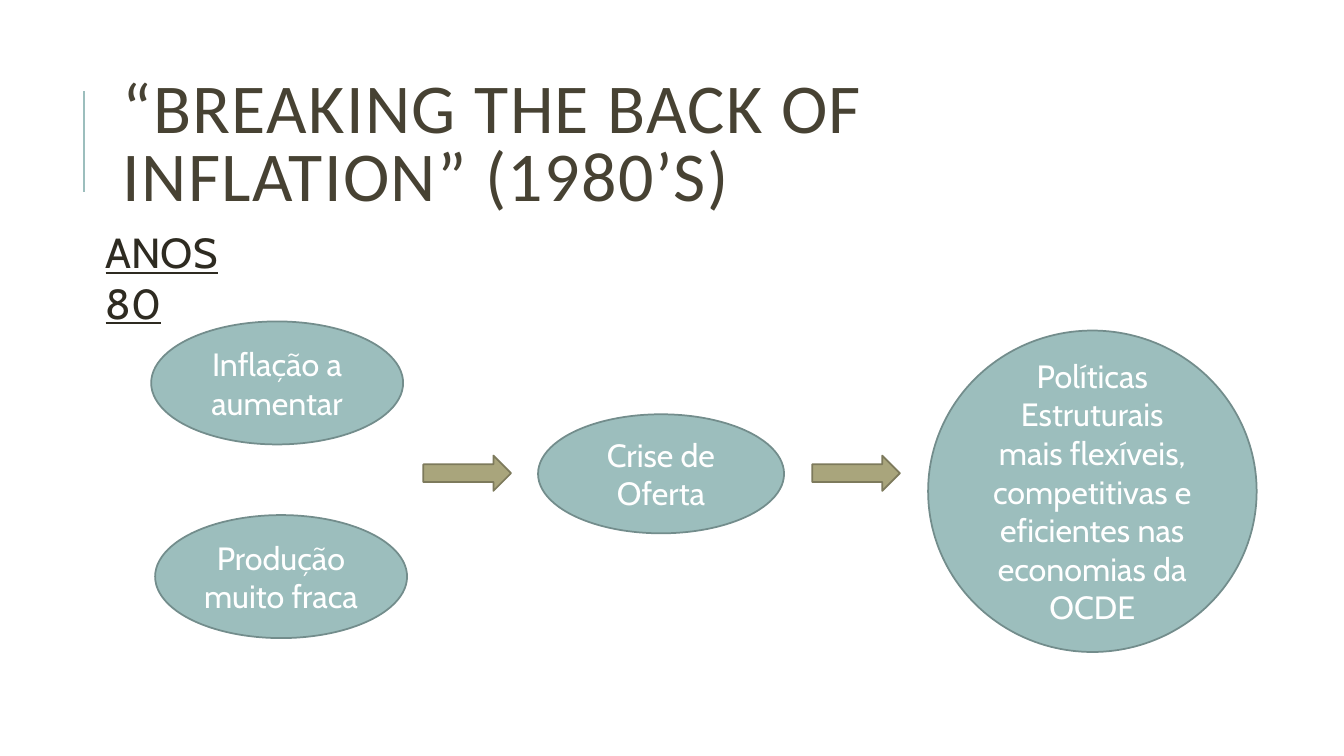
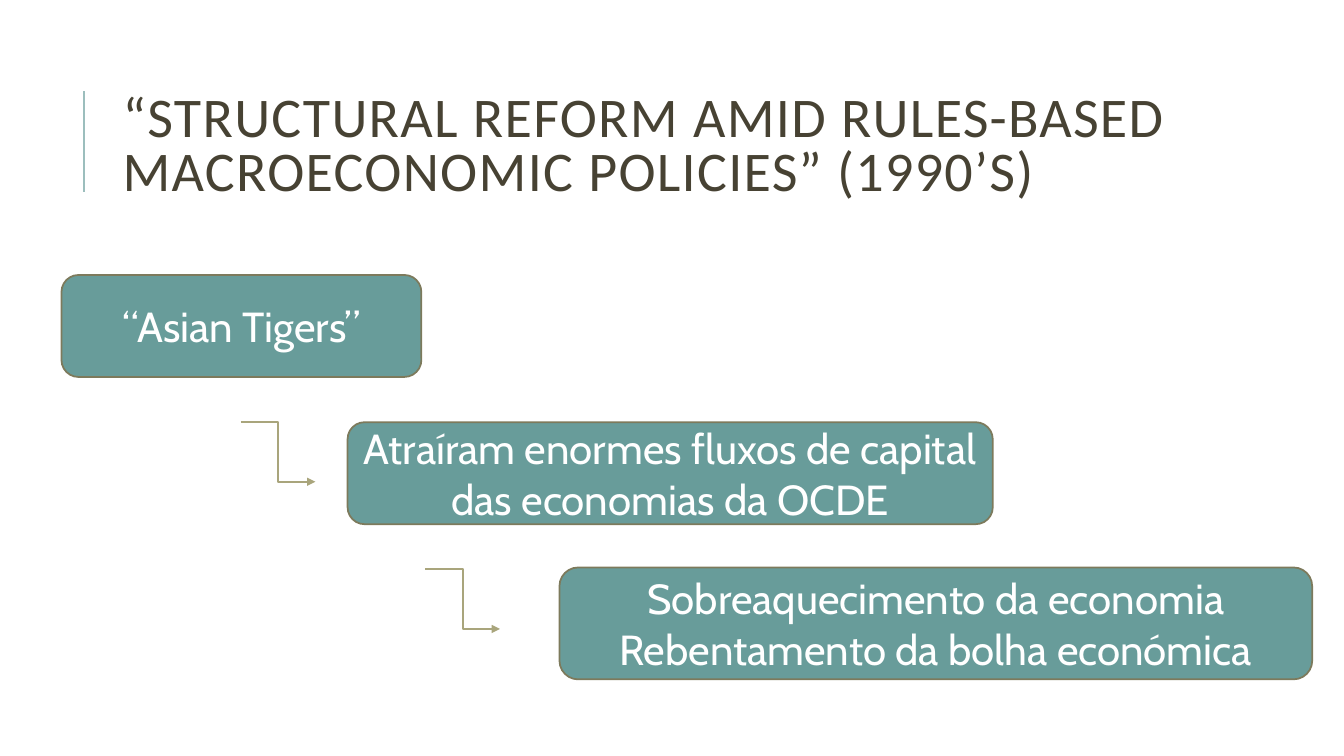
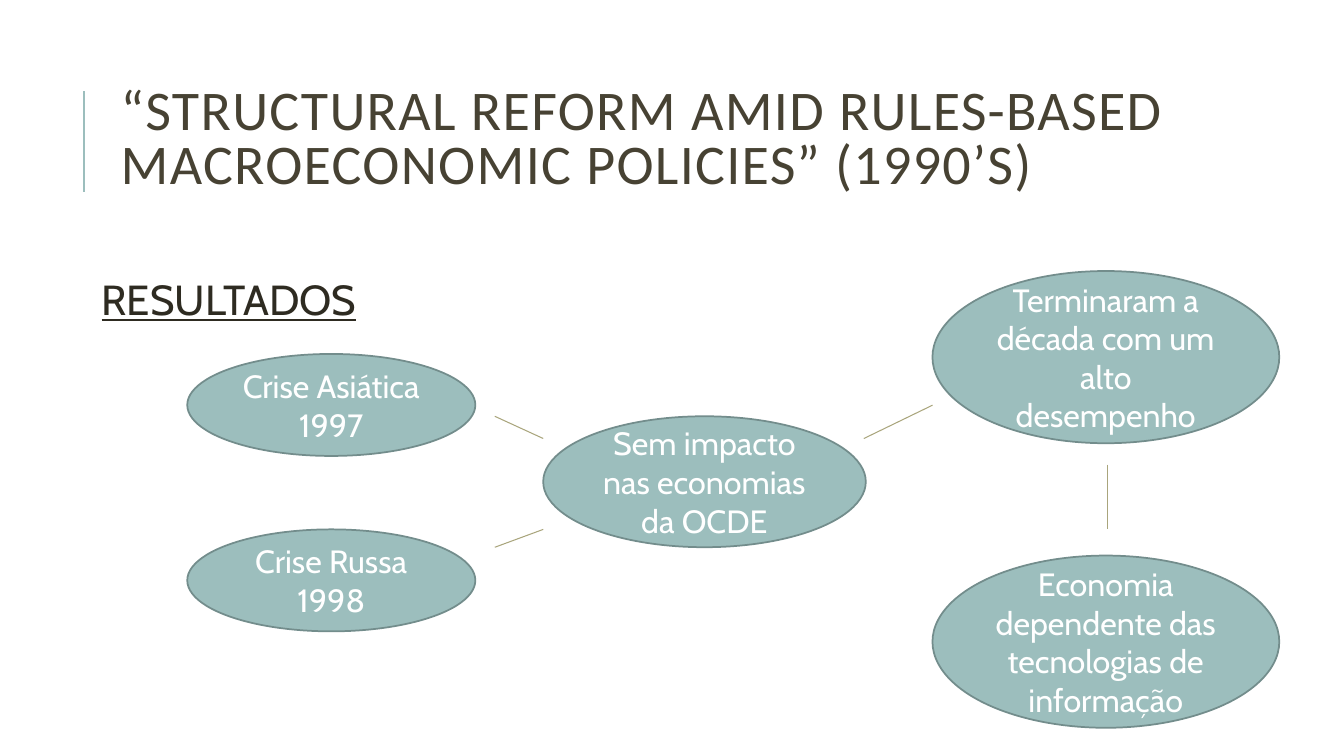
"""Build three slides on structural reform in the OECD economies."""
from pptx import Presentation
from pptx.dml.color import RGBColor as Rgb
from pptx.enum.shapes import MSO_CONNECTOR as Link, MSO_SHAPE as Form
from pptx.enum.text import MSO_ANCHOR as Anchor, PP_ALIGN as Align
from pptx.oxml.ns import qn
from pptx.util import Cm, Pt
from lxml.etree import SubElement as Sub

HUES = {
    "title": "474233", "text": "2E2B21", "white": "FFFFFF",
    "mist": "9CBEBD", "rim": "738D8C", "teal": "689C9A",
    "olive": "A9A57C", "moss": "7D7A5C",
}
REFORM = "“STRUCTURAL REFORM AMID RULES-BASED MACROECONOMIC POLICIES” (1990’S)"


def hue(name):
    return Rgb.from_string(HUES[name])


def style(par, size, tint, face="Cabin"):
    font = par.font
    font.name, font.size = face, Pt(size)
    font.color.rgb = hue(tint)


def line(slide, start, end, tint="olive", width=0.75, kind=Link.STRAIGHT):
    link = slide.shapes.add_connector(kind, *map(Cm, start + end))
    link.line.color.rgb = hue(tint)
    link.line.width = Pt(width)
    Sub(link._element.spPr, qn("a:effectLst"))
    return link


def elbow(slide, left, top):
    link = line(slide, (left, top), (left + 1.88, top + 1.5), width=1.5, kind=Link.ELBOW)
    Sub(link.line._get_or_add_ln(), qn("a:tailEnd"), type="triangle")


def words(slide, area, text):
    frame = slide.shapes.add_textbox(*map(Cm, area)).text_frame
    frame.word_wrap = True
    frame.text = text
    return frame


def label(slide, area, text):
    par = words(slide, area, text).paragraphs[0]
    style(par, 30, "text")
    par.font.underline = True


def page(deck, area, text, size=40):
    slide = deck.slides.add_slide(deck.slide_layouts[6])
    line(slide, (2.11, 4.83), (2.11, 2.29), "mist", 1.5)
    frame = words(slide, area, text)
    frame.vertical_anchor = Anchor.MIDDLE
    par = frame.paragraphs[0]
    par.line_spacing = 0.8
    style(par, size, "title", "Calibri")
    par.runs[0]._r.get_or_add_rPr().set("spc", "100")
    return slide


def solid(slide, form, area, fill, rim):
    shape = slide.shapes.add_shape(form, *map(Cm, area))
    shape.shadow.inherit = False
    shape.fill.solid()
    shape.fill.fore_color.rgb = hue(fill)
    shape.line.color.rgb = hue(rim)
    shape.line.width = Pt(1.25)
    return shape


def fill_in(shape, text, size):
    frame = shape.text_frame
    frame.text = text
    frame.vertical_anchor = Anchor.MIDDLE
    for par in frame.paragraphs:
        par.alignment = Align.CENTER
        style(par, size, "white")


def oval(slide, area, text):
    fill_in(solid(slide, Form.OVAL, area, "mist", "rim"), text, 23)


def card(slide, area, text):
    fill_in(solid(slide, Form.ROUNDED_RECTANGLE, area, "teal", "moss"), text, 30)


def arrow(slide, left):
    solid(slide, Form.RIGHT_ARROW, (left, 11.48, 2.21, 0.89), "olive", "moss")


def crisis(deck):
    slide = page(deck, (2.84, 1.63, 27, 4.17),
                 "“BREAKING THE BACK OF INFLATION” (1980’S)", 50)
    label(slide, (2.41, 5.59, 4.83, 1.55), "ANOS 80")
    oval(slide, (3.81, 8.1, 6.35, 3.1), "Inflação a aumentar")
    oval(slide, (3.91, 12.98, 6.35, 3.1), "Produção muito fraca")
    oval(slide, (13.56, 10.44, 6.2, 3), "Crise de Oferta")
    oval(slide, (23.39, 8.33, 8.28, 8.1),
         "Políticas Estruturais mais flexíveis, competitivas e "
         "eficientes nas economias da OCDE")
    for left in (10.67, 20.47):
        arrow(slide, left)


def tigers(deck):
    slide = page(deck, (2.84, 1.65, 28.07, 4.17), REFORM)
    card(slide, (1.55, 6.93, 9.07, 2.57), "“Asian Tigers”")
    card(slide, (8.76, 10.64, 16.26, 2.57),
         "Atraíram enormes fluxos de capital das economias da OCDE")
    card(slide, (14.1, 14.3, 18.97, 2.82),
         "Sobreaquecimento da economia\nRebentamento da bolha económica")
    elbow(slide, 6.07, 10.64)
    elbow(slide, 10.72, 14.35)


def results(deck):
    slide = page(deck, (2.79, 1.5, 28.02, 4.11), REFORM)
    label(slide, (2.31, 6.78, 6.99, 1.55), "RESULTADOS")
    oval(slide, (4.72, 8.92, 7.26, 2.57), "Crise Asiática 1997")
    oval(slide, (4.72, 13.34, 7.26, 2.57), "Crise Russa 1998")
    oval(slide, (13.69, 10.49, 8.13, 3.3), "Sem impacto nas economias da OCDE")
    oval(slide, (23.5, 6.83, 8.74, 4.34), "Terminaram a década com um alto desempenho")
    oval(slide, (23.5, 14, 8.74, 4.34),
         "Economia dependente das tecnologias de informação")
    for start, end in (
        ((12.47, 10.49), (13.69, 11.05)),
        ((12.47, 13.79), (13.69, 13.34)),
        ((21.77, 11.05), (23.5, 10.21)),
        ((27.91, 11.71), (27.91, 13.34)),
    ):
        line(slide, start, end)


def main():
    deck = Presentation()
    deck.slide_width, deck.slide_height = Cm(33.87), Cm(19.05)
    for build in (crisis, tigers, results):
        build(deck)
    deck.save("out.pptx")


if __name__ == "__main__":
    main()
